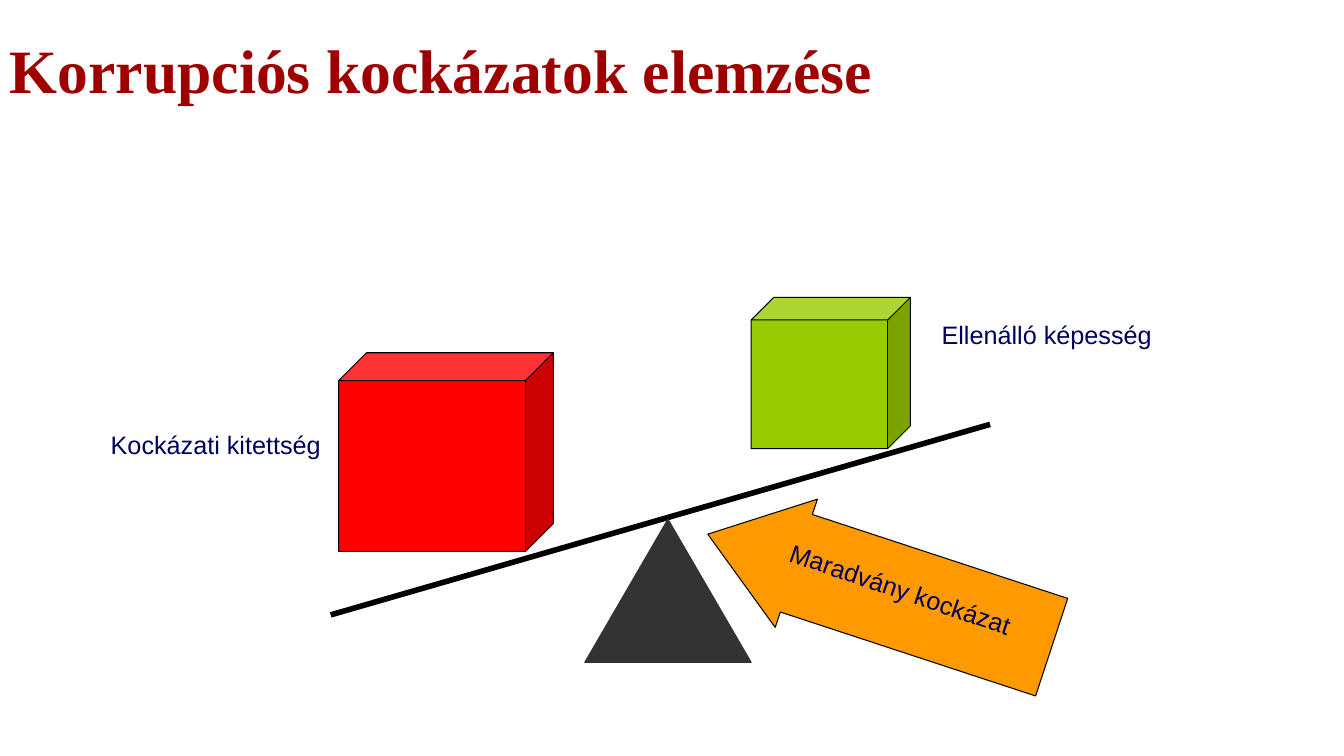
import pptx
import pptx.util
import pptx.dml.color
import pptx.enum.shapes
import pptx.enum.text
import lxml.etree

Inches = pptx.util.Inches
Pt = pptx.util.Pt
MSO_SHAPE = pptx.enum.shapes.MSO_SHAPE
ANCHOR = pptx.enum.text.MSO_ANCHOR


def color(hex_string):
    return pptx.dml.color.RGBColor.from_string(hex_string)


class RiskSlide:
    font = "Arial"
    title_font = "Times New Roman"
    text_color = "00005A"
    title_color = "9E0000"
    outline = "000000"

    def __init__(self, slide):
        self.shapes = slide.shapes

    def text(self, box, words, size, font, ink, bold=False, anchor=ANCHOR.TOP):
        text_box = self.shapes.add_textbox(*map(Inches, box))
        frame = text_box.text_frame
        frame.word_wrap = True
        frame.vertical_anchor = anchor
        run = frame.paragraphs[0].add_run()
        run.text = words
        run.font.size = Pt(size)
        run.font.name = font
        run.font.bold = bold
        run.font.color.rgb = color(ink)
        return text_box

    def title(self, box, words):
        heading = self.text(box, words, 44, self.title_font, self.title_color,
                            bold=True, anchor=ANCHOR.MIDDLE)
        heading.text_frame.paragraphs[0].line_spacing = 0.9

    def label(self, box, words, rotation=0):
        caption = self.text(box, words, 18, self.font, self.text_color)
        caption.rotation = rotation

    def solid(self, kind, box, fill, adjustments, line=outline, rotation=0):
        """Add a filled preset shape with a thin outline."""
        body = self.shapes.add_shape(kind, *map(Inches, box))
        for index, value in enumerate(adjustments):
            body.adjustments[index] = value
        body.rotation = rotation
        body.shadow.inherit = False
        body.fill.solid()
        body.fill.fore_color.rgb = color(fill)
        body.line.color.rgb = color(line)
        body.line.width = Pt(0.75)

    def beam(self, start, end, width):
        lever = self.shapes.add_connector(
            pptx.enum.shapes.MSO_CONNECTOR.STRAIGHT, *map(Inches, start + end))
        lever.line.color.rgb = color(self.outline)
        lever.line.width = Pt(width)
        lxml.etree.SubElement(lever._element.spPr, pptx.oxml.ns.qn("a:effectLst"))


def main():
    deck = pptx.Presentation()
    deck.slide_width = Inches(13.33)
    deck.slide_height = Inches(7.5)
    balance = RiskSlide(deck.slides.add_slide(deck.slide_layouts[6]))

    balance.title((0, 0, 11.5, 1.45), "Korrupciós kockázatok elemzése")
    balance.beam((3.28, 6.1), (9.82, 4.21), 4)
    balance.solid(MSO_SHAPE.ISOSCELES_TRIANGLE, (5.8, 5.15, 1.65, 1.42),
                  "333333", [0.5], line="333333")
    balance.solid(MSO_SHAPE.CUBE, (3.36, 3.5, 2.13, 1.97), "FF0000", [0.14])
    balance.solid(MSO_SHAPE.CUBE, (7.45, 2.95, 1.58, 1.5), "99CC00", [0.15])
    balance.label((1, 4.21, 3.43, 0.4), "Kockázati kitettség")
    balance.solid(MSO_SHAPE.LEFT_ARROW, (6.93, 5.19, 3.59, 1.34),
                  "FF9900", [0.76, 0.69], rotation=18.2)
    balance.label((7.67, 5.75, 3.15, 0.4), "Maradvány kockázat", rotation=18.8)
    balance.label((9.24, 3.12, 3.78, 0.4), "Ellenálló képesség")

    deck.save("out.pptx")


if __name__ == "__main__":
    main()
